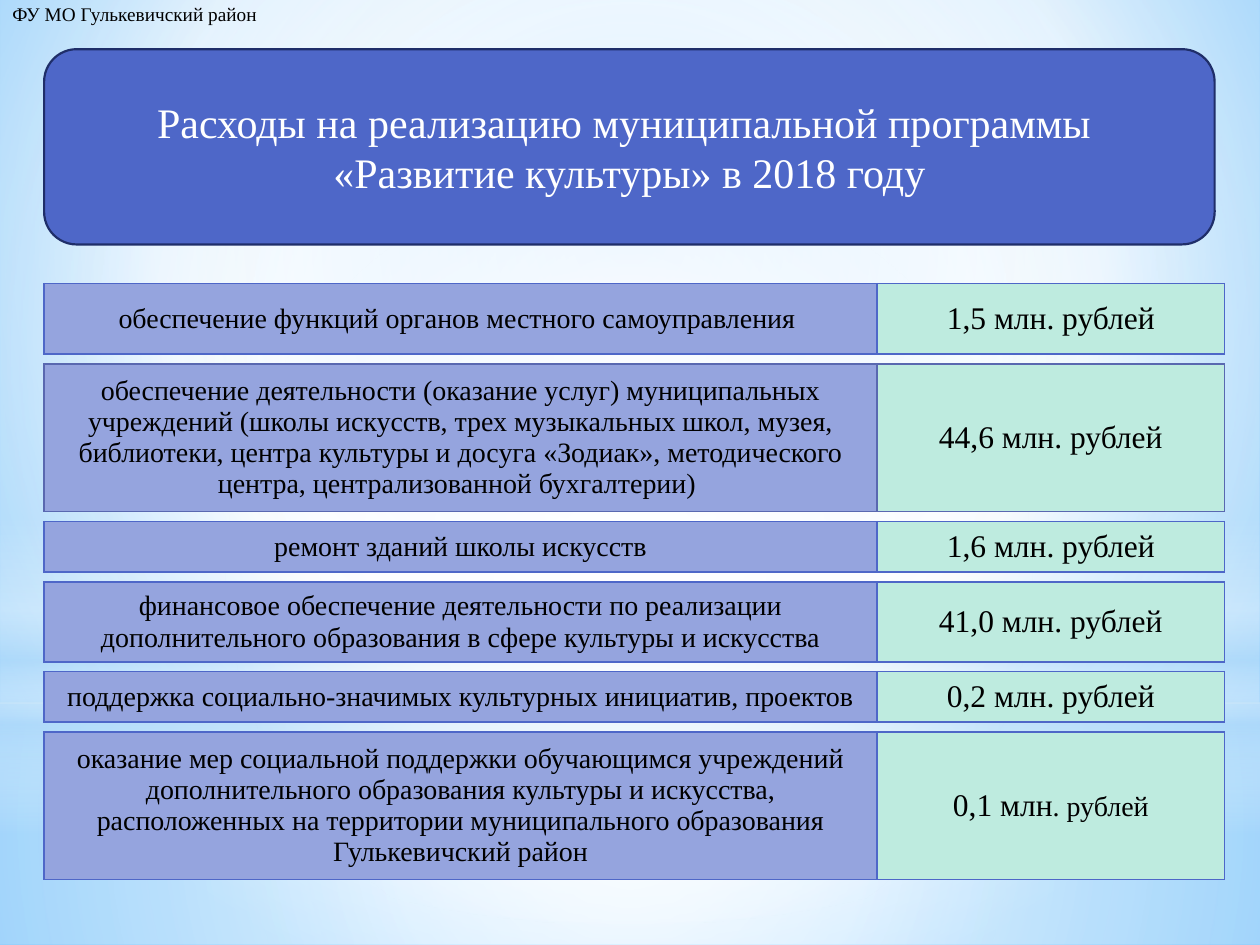
from lxml import etree
from pptx import Presentation
from pptx.dml.color import RGBColor
from pptx.enum.shapes import MSO_SHAPE
from pptx.enum.text import MSO_ANCHOR, PP_ALIGN
from pptx.oxml.ns import qn
from pptx.util import Inches, Pt

RECT, OVAL, ROUNDED = MSO_SHAPE.RECTANGLE, MSO_SHAPE.OVAL, MSO_SHAPE.ROUNDED_RECTANGLE
MIDDLE, CENTER = MSO_ANCHOR.MIDDLE, PP_ALIGN.CENTER

WIDTH, HEIGHT = 10, 7.5
FONT = "Times New Roman"
BLUE, MUTED, NAVY = "4E67C8", "5968B0", "1F2E69"
LABEL_FILL, VALUE_FILL = "95A4DE", "BEEBDF"
WHITE, SKY, BLACK = "FFFFFF", "B4DCFA", "000000"

LEFT, TABLE_TOP, GAP = 0.35, 2.25, 0.08
COLUMNS = (6.61, 2.76)

OFFICE = "ФУ МО Гулькевичский район"
TITLE = ["Расходы на реализацию муниципальной программы ",
         "«Развитие культуры» в 2018 году"]

# label, runs of the value as (text, size), height, border colour
EXPENSES = [
    ("обеспечение функций органов местного самоуправления ",
     [("1,5 млн. рублей", 18)], 0.56, BLUE),
    ("обеспечение деятельности (оказание услуг) муниципальных учреждений "
     "(школы искусств, трех музыкальных школ, музея, библиотеки, центра культуры "
     "и досуга «Зодиак», методического центра, централизованной бухгалтерии) ",
     [("44,6 млн. рублей", 18)], 1.17, MUTED),
    ("ремонт зданий школы искусств",
     [("1,6 млн. рублей", 18)], 0.4, BLUE),
    ("финансовое обеспечение деятельности по реализации дополнительного "
     "образования в сфере культуры и искусства",
     [("41,0 млн. рублей", 18)], 0.63, BLUE),
    ("поддержка социально-значимых культурных инициатив, проектов",
     [("0,2 млн. рублей", 18)], 0.4, BLUE),
    ("оказание мер социальной поддержки обучающимся учреждений дополнительного "
     "образования культуры и искусства, расположенных на территории "
     "муниципального образования Гулькевичский район",
     [("0,1 млн", 18), (". рублей", 16)], 1.17, BLUE),
]

# Gradient stops: position %, colour, opacity %
BACKDROP = [(0, "9ED5FF", 100), (60, WHITE, 100), (100, "5BB9FF", 100)]
BACKDROP_FOCUS = (20, 10, 20, 60)
CENTRE = (50, 50, 50, 50)
# shape, top, height, stops, focus (None for a vertical gradient)
GLOWS = [
    (RECT, 5.58, 1.92, [(0, WHITE, 91), (37, WHITE, 76), (100, SKY, 79)], CENTRE),
    (RECT, 0, 5.58, [(0, WHITE, 89), (48, WHITE, 62), (100, SKY, 79)], CENTRE),
    (RECT, 4.12, 2.5, [(0, WHITE, 0), (29, WHITE, 30), (45, SKY, 40),
                       (55, WHITE, 26), (65, SKY, 60), (100, WHITE, 0)], None),
    (OVAL, 1.75, 5.58, [(0, WHITE, 100), (56, WHITE, 0)], CENTRE),
]


def rgb(color):
    return RGBColor.from_string(color)


def sub(parent, tag, **attrs):
    return etree.SubElement(parent, qn(tag), {k: str(v) for k, v in attrs.items()})


def set_gradient(fill, element, stops, focus):
    """Give fill, which belongs to element, a circular or vertical gradient."""
    fill.gradient()
    grad = element.find(".//" + qn("a:gradFill"))
    for child in list(grad):
        grad.remove(child)
    stop_list = sub(grad, "a:gsLst")
    for position, color, opacity in stops:
        stop = sub(stop_list, "a:gs", pos=position * 1000)
        clr = sub(stop, "a:srgbClr", val=color)
        if opacity < 100:
            sub(clr, "a:alpha", val=opacity * 1000)
    if focus:
        way = sub(grad, "a:path", path="circle")
        sub(way, "a:fillToRect", **{k: v * 1000 for k, v in zip("ltrb", focus)})
    else:
        sub(grad, "a:lin", ang=90 * 60000, scaled=0)


def add_shape(slide, kind, left, top, width, height):
    sp = slide.shapes.add_shape(kind, *map(Inches, (left, top, width, height)))
    sp.shadow.inherit = False
    return sp


def style(p, size, color, align=None):
    p.font.name, p.font.size, p.font.color.rgb = FONT, Pt(size), rgb(color)
    p.alignment = align


def fill_cell(cell, runs, fill, border):
    tc_pr = cell._tc.get_or_add_tcPr()
    for side in "LRTB":
        ln = sub(tc_pr, "a:ln" + side, w=Pt(1))
        sub(sub(ln, "a:solidFill"), "a:srgbClr", val=border)
    cell.fill.solid()
    cell.fill.fore_color.rgb = rgb(fill)
    cell.vertical_anchor = MIDDLE
    p = cell.text_frame.paragraphs[0]
    style(p, runs[0][1], BLACK, CENTER)
    for text, size in runs:
        r = p.add_run()
        r.text = text
        r.font.size = Pt(size)


def add_expense(slide, top, label, value, height, border):
    table = slide.shapes.add_table(1, 2, Inches(LEFT), Inches(top),
                                   Inches(sum(COLUMNS)), Inches(height)).table
    table.first_row = table.horz_banding = False
    for column, width in zip(table.columns, COLUMNS):
        column.width = Inches(width)
    fill_cell(table.cell(0, 0), [(label, 16)], LABEL_FILL, border)
    fill_cell(table.cell(0, 1), value, VALUE_FILL, border)


def main():
    prs = Presentation()
    prs.slide_width, prs.slide_height = Inches(WIDTH), Inches(HEIGHT)
    slide = prs.slides.add_slide(prs.slide_layouts[6])

    set_gradient(slide.background.fill, slide.element, BACKDROP, BACKDROP_FOCUS)
    for kind, top, height, stops, focus in GLOWS:
        sp = add_shape(slide, kind, 0, top, WIDTH, height)
        sp.line.fill.background()
        set_gradient(sp.fill, sp.element, stops, focus)

    box = slide.shapes.add_textbox(0, Inches(-0.03), Inches(2.18), Inches(0.29))
    box.text_frame.text = OFFICE
    style(box.text_frame.paragraphs[0], 11, BLACK)

    banner = add_shape(slide, ROUNDED, LEFT, 0.39, 9.29, 1.55)
    banner.fill.solid()
    banner.fill.fore_color.rgb = rgb(BLUE)
    banner.line.color.rgb = rgb(NAVY)
    banner.line.width = Pt(1.25)
    tf = banner.text_frame
    tf.vertical_anchor = MIDDLE
    tf.text = "\n".join(TITLE)
    for p in tf.paragraphs:
        style(p, 24, WHITE, CENTER)

    top = TABLE_TOP
    for label, value, height, border in EXPENSES:
        add_expense(slide, top, label, value, height, border)
        top += height + GAP

    prs.save("out.pptx")


if __name__ == "__main__":
    main()
